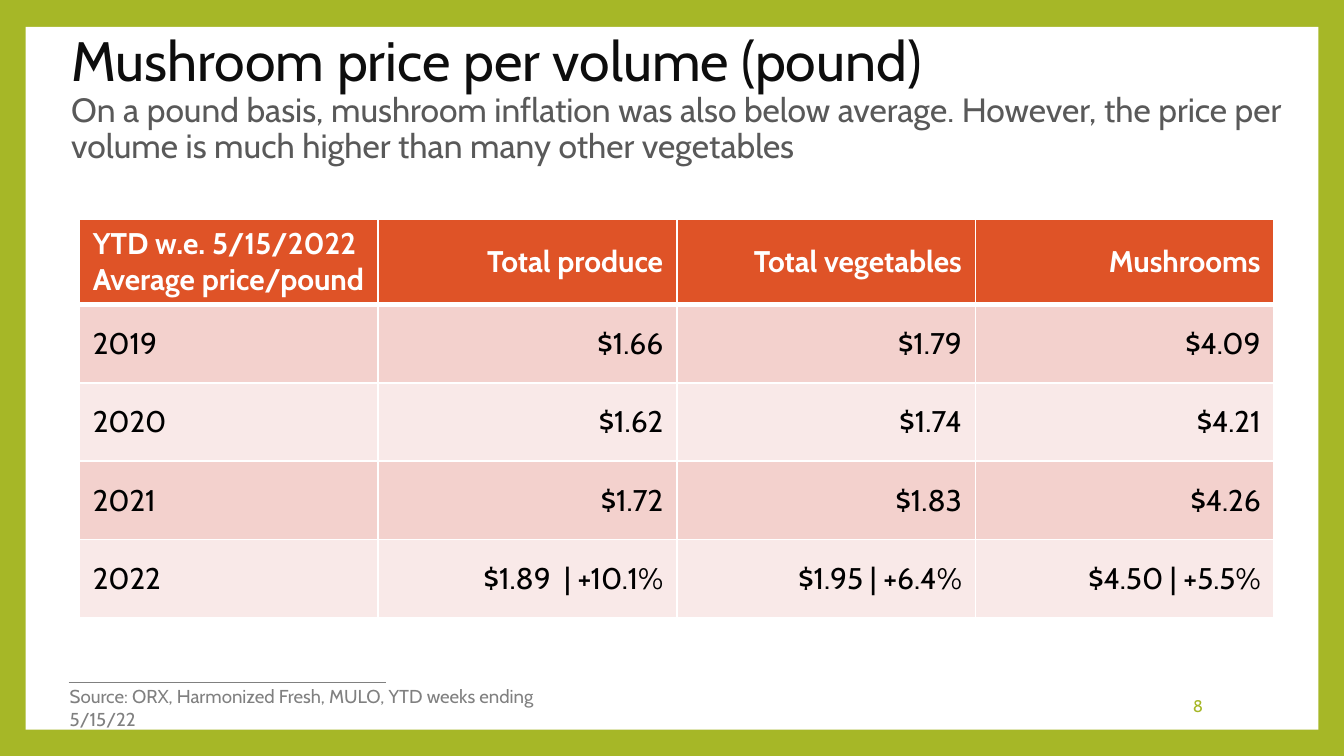
"""Builds the slide on mushroom price per pound."""
from copy import deepcopy
from dataclasses import dataclass

from lxml import etree
from pptx import Presentation
from pptx.dml.color import RGBColor
from pptx.enum.shapes import MSO_CONNECTOR, MSO_SHAPE
from pptx.enum.text import MSO_ANCHOR, MSO_AUTO_SIZE, PP_ALIGN
from pptx.oxml.ns import qn
from pptx.util import Inches, Pt

LEFT, RIGHT = PP_ALIGN.LEFT, PP_ALIGN.RIGHT
TOP, MIDDLE = MSO_ANCHOR.TOP, MSO_ANCHOR.MIDDLE
RECT = MSO_SHAPE.RECTANGLE
STRAIGHT = MSO_CONNECTOR.STRAIGHT
NO_FIT = MSO_AUTO_SIZE.NONE

FONT = "Cabin"
COLORS = {
    "green": "A6B727",
    "white": "FFFFFF",
    "gray": "808080",
    "ink": "0D0D0D",
    "soft": "595959",
    "black": "000000",
    "head": "DF5327",
    "odd": "F3D1CD",
    "even": "F9E9E8",
}
PRICES = [
    ["YTD w.e. 5/15/2022\nAverage price/pound", "Total produce",
     "Total vegetables", "Mushrooms"],
    ["2019", "$1.66", "$1.79", "$4.09"],
    ["2020", "$1.62", "$1.74", "$4.21"],
    ["2021", "$1.72", "$1.83", "$4.26"],
    ["2022", "$1.89  | +10.1%", "$1.95 | +6.4%", "$4.50 | +5.5%"],
]


@dataclass
class Label:
    text: str
    left: float
    top: float
    width: float
    height: float
    size: float
    color: str
    align: PP_ALIGN
    anchor: MSO_ANCHOR


LABELS = [
    Label("8", 7.65, 5.1, 1.4, 0.3, 9, "green", RIGHT, MIDDLE),
    Label("Source: ORX, Harmonized Fresh, MULO, YTD weeks ending 5/15/22",
          0.42, 5.05, 3.88, 0.27, 10, "gray", LEFT, TOP),
]


def rgb(name: str) -> RGBColor:
    """Return a named color."""
    return RGBColor.from_string(COLORS[name])


def style(run, size: float, color: str, bold: bool = False) -> None:
    """Format one run."""
    run.font.name = FONT
    run.font.size = Pt(size)
    run.font.bold = bold
    run.font.color.rgb = rgb(color)


def add_frame(slide) -> None:
    """Draw the white panel and the rule above the source."""
    slide.background.fill.solid()
    slide.background.fill.fore_color.rgb = rgb("green")
    panel = slide.shapes.add_shape(
        RECT, Inches(0.19), Inches(0.2), Inches(9.62), Inches(5.23))
    panel.shadow.inherit = False
    panel.fill.solid()
    panel.fill.fore_color.rgb = rgb("white")
    panel.line.fill.background()
    rule = slide.shapes.add_connector(
        STRAIGHT, Inches(0.51), Inches(5.08), Inches(2.87), Inches(5.08))
    rule.line.color.rgb = rgb("gray")
    rule.line.width = Pt(0.79)
    etree.SubElement(rule._element.spPr, qn("a:effectLst"))


def add_title(slide) -> None:
    """Fill the title and bring it in front of the panel."""
    title = slide.shapes.title
    title.left, title.top = Inches(0.43), Inches(0.36)
    title.width, title.height = Inches(9.43), Inches(0.76)
    slide.shapes._spTree.append(title._element)
    frame = title.text_frame
    frame.word_wrap = True
    frame.auto_size = NO_FIT
    frame.vertical_anchor = MIDDLE
    para = frame.paragraphs[0]
    para.text = (
        "Mushroom price per volume (pound)\v"
        "On a pound basis, mushroom inflation was also below average. "
        "However, the price per volume is much higher than many other "
        "vegetables")
    para.alignment = LEFT
    para.line_spacing = 0.9
    para.space_before = Pt(0)
    head, body = para.runs
    style(head, 29.7, "ink")
    style(body, 18, "soft")
    para._p.find(qn("a:br")).append(deepcopy(head._r.rPr))


def add_label(slide, label: Label) -> None:
    """Draw one text box."""
    box = slide.shapes.add_textbox(
        Inches(label.left), Inches(label.top),
        Inches(label.width), Inches(label.height))
    frame = box.text_frame
    frame.word_wrap = True
    frame.vertical_anchor = label.anchor
    para = frame.paragraphs[0]
    para.text = label.text
    para.alignment = label.align
    style(para.runs[0], label.size, label.color)


def add_border(cell, side: str, width: float) -> None:
    """Draw one white cell border."""
    line = etree.SubElement(
        cell._tc.get_or_add_tcPr(), qn(f"a:ln{side}"), w=str(Pt(width)))
    fill = etree.SubElement(line, qn("a:solidFill"))
    etree.SubElement(fill, qn("a:srgbClr"), val=COLORS["white"])


def fill_cell(cell, text: str, row: int, col: int) -> None:
    """Write and format one table cell."""
    header = row == 0
    widths = {"L": 1, "R": 1, "T": 3 if row == 1 else 1,
              "B": 3 if header else 1}
    for side, width in widths.items():
        add_border(cell, side, width)
    cell.fill.solid()
    band = "odd" if row % 2 else "even"
    cell.fill.fore_color.rgb = rgb("head" if header else band)
    cell.vertical_anchor = MIDDLE
    cell.text_frame.text = text
    for para in cell.text_frame.paragraphs:
        para.alignment = RIGHT if col else LEFT
        style(para.runs[0], 16, "white" if header else "black", header)


def add_prices(slide) -> None:
    """Draw the price table."""
    rows, cols = len(PRICES), len(PRICES[0])
    table = slide.shapes.add_table(
        rows, cols, Inches(0.59), Inches(1.63),
        Inches(8.89), Inches(2.96)).table
    for row, texts in enumerate(PRICES):
        table.rows[row].height = Inches(2.33 / 4 if row else 0.59)
        for col, text in enumerate(texts):
            fill_cell(table.cell(row, col), text, row, col)


def main() -> None:
    """Build and save the slide."""
    deck = Presentation()
    deck.slide_width = Inches(10)
    deck.slide_height = deck.slide_width * 9 // 16
    slide = deck.slides.add_slide(deck.slide_layouts[5])
    add_frame(slide)
    add_title(slide)
    add_prices(slide)
    for label in LABELS:
        add_label(slide, label)
    deck.save("out.pptx")


if __name__ == "__main__":
    main()
